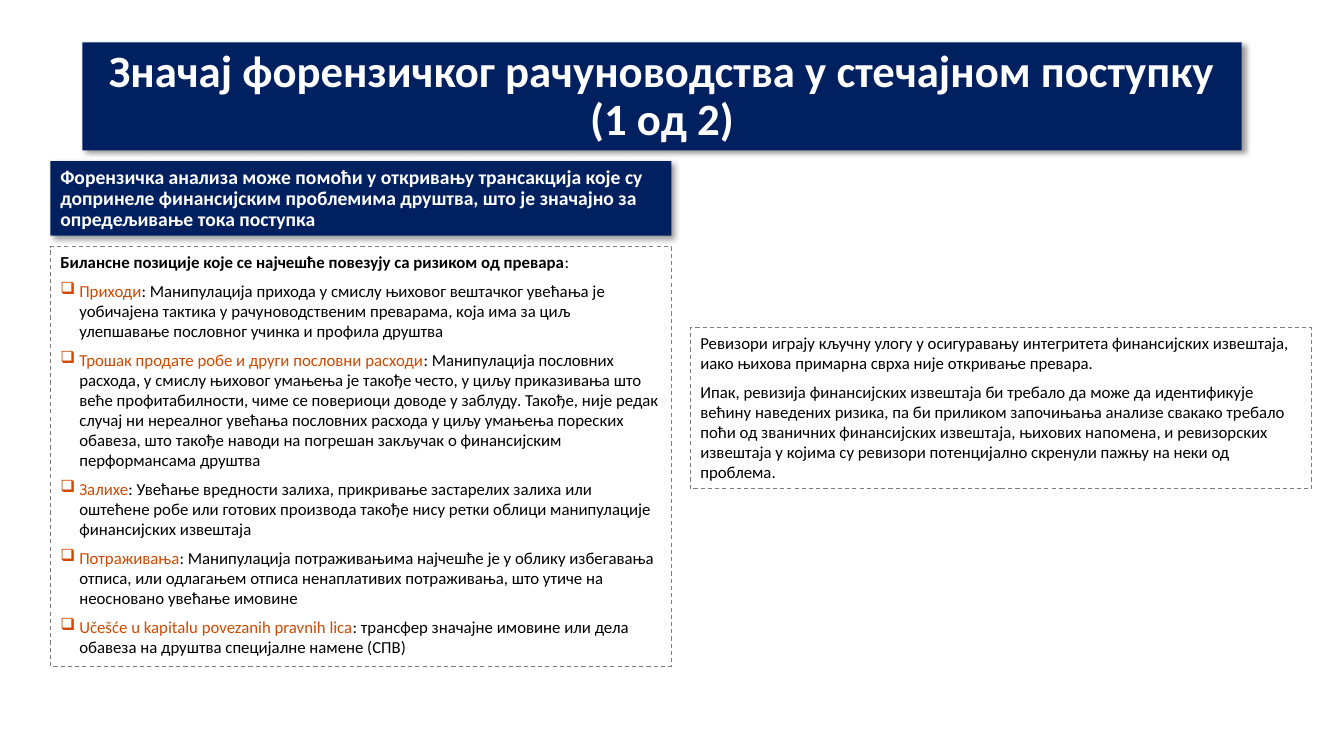
from lxml import etree
from pptx import Presentation
from pptx.dml.color import RGBColor
from pptx.enum import dml, shapes, text
from pptx.oxml import ns
from pptx.util import Cm, Pt

TITLE = "Значај форензичког рачуноводства у стечајном поступку (1 од 2)"
HEADLINE = (
    "Форензичка анализа може помоћи у откривању трансакција које су допринеле "
    "финансијским проблемима друштва, што је значајно за опредељивање тока поступка"
)
RISKS_INTRO = "Билансне позиције које се најчешће повезују са ризиком од превара"
RISKS = [
    ("Приходи",
     "Манипулација прихода у смислу њиховог вештачког увећања је уобичајена тактика у "
     "рачуноводственим преварама, која има за циљ улепшавање пословног учинка и профила друштва"),
    ("Трошак продате робе и други пословни расходи",
     "Манипулација пословних расхода, у смислу њиховог умањења је такође често, у циљу "
     "приказивања што веће профитабилности, чиме се повериоци доводе у заблуду. Такође, није "
     "редак случај ни нереалног увећања пословних расхода у циљу умањења пореских обавеза, "
     "што такође наводи на погрешан закључак о финансијским перформансама друштва"),
    ("Залихе",
     "Увећање вредности залиха, прикривање застарелих залиха или оштећене робе или готових "
     "производа такође нису ретки облици манипулације финансијских извештаја"),
    ("Потраживања",
     "Манипулација потраживањима најчешће је у облику избегавања отписа, или одлагањем отписа "
     "ненаплативих потраживања, што утиче на неосновано увећање имовине"),
    ("Učešće u kapitalu povezanih pravnih lica",
     "трансфер значајне имовине или дела обавеза на друштва специјалне намене (СПВ)"),
]
AUDIT = [
    "Ревизори играју кључну улогу у осигуравању интегритета финансијских извештаја, иако "
    "њихова примарна сврха није откривање превара.",
    "Ипак, ревизија финансијских извештаја би требало да може да идентификује већину наведених "
    "ризика, па би приликом започињања анализе свакако требало поћи од званичних финансијских "
    "извештаја, њихових напомена, и ревизорских извештаја у којима су ревизори потенцијално "
    "скренули пажњу на неки од проблема.",
]

NAVY = RGBColor(0x00, 0x20, 0x60)
WHITE = RGBColor(0xFF, 0xFF, 0xFF)
BLACK = RGBColor(0x00, 0x00, 0x00)
GRAY = RGBColor(0x7D, 0x7D, 0x7D)
ORANGE = RGBColor(0xD0, 0x4A, 0x02)
FONT = "Calibri"

LEFT, COLUMN, GUTTER = 1.27, 15.65, 0.48
RIGHT = LEFT + COLUMN + GUTTER
INDENT = Cm(0.48)


def add_panel(slide, left, top, width, height, anchor):
    panel = slide.shapes.add_shape(
        shapes.MSO_SHAPE.RECTANGLE, Cm(left), Cm(top), Cm(width), Cm(height))
    panel.shadow.inherit = False
    frame = panel.text_frame
    frame.word_wrap = True
    frame.auto_size = text.MSO_AUTO_SIZE.SHAPE_TO_FIT_TEXT
    frame.vertical_anchor = anchor
    return panel


def add_shadow(panel):
    effects = panel._element.spPr.find(ns.qn("a:effectLst"))
    shadow = etree.SubElement(
        effects, ns.qn("a:outerShdw"), blurRad=str(Pt(4)), dist=str(Pt(3)),
        dir="2700000", algn="tl", rotWithShape="0")
    color = etree.SubElement(shadow, ns.qn("a:srgbClr"), val=str(BLACK))
    etree.SubElement(color, ns.qn("a:alpha"), val="40000")


def add_bullet(paragraph):
    properties = paragraph._p.get_or_add_pPr()
    properties.set("marL", str(INDENT))
    properties.set("indent", str(-INDENT))
    color = etree.SubElement(properties, ns.qn("a:buClr"))
    etree.SubElement(color, ns.qn("a:srgbClr"), val=str(ORANGE))
    etree.SubElement(properties, ns.qn("a:buChar"), char="❑")


def add_run(paragraph, words, size, color, bold=False):
    run = paragraph.add_run()
    run.text = words
    run.font.name = FONT
    run.font.size = Pt(size)
    run.font.color.rgb = color
    run.font.bold = bold


def add_banner(slide, words, box, size, align):
    banner = add_panel(slide, *box, text.MSO_ANCHOR.BOTTOM)
    banner.fill.solid()
    banner.fill.fore_color.rgb = NAVY
    banner.line.fill.background()
    add_shadow(banner)
    paragraph = banner.text_frame.paragraphs[0]
    paragraph.alignment = align
    paragraph.line_spacing = 0.9
    add_run(paragraph, words, size, WHITE, bold=True)


def add_note(slide, box, entries):
    """Dashed box; each entry is (bulleted, runs) with runs of (words, color, bold)."""
    note = add_panel(slide, *box, text.MSO_ANCHOR.TOP)
    note.fill.background()
    note.line.color.rgb = GRAY
    note.line.width = Pt(0.75)
    note.line.dash_style = dml.MSO_LINE.DASH
    frame = note.text_frame
    for number, (bulleted, runs) in enumerate(entries):
        paragraph = frame.add_paragraph() if number else frame.paragraphs[0]
        if bulleted:
            add_bullet(paragraph)
        paragraph.alignment = text.PP_ALIGN.LEFT
        if number:
            paragraph.space_before = Pt(6)
        for words, color, bold in runs:
            add_run(paragraph, words, 12, color, bold)


def main():
    deck = Presentation()
    deck.slide_width, deck.slide_height = Cm(33.87), Cm(19.05)
    slide = deck.slides.add_slide(deck.slide_layouts[6])

    add_banner(slide, TITLE, (2.08, 1.07, 29.21, 2.72), 32, text.PP_ALIGN.CENTER)
    add_banner(slide, HEADLINE, (LEFT, 4.06, COLUMN, 1.88), 14, text.PP_ALIGN.LEFT)

    risks = [(False, [(RISKS_INTRO, BLACK, True), (":", BLACK, False)])]
    risks += [(True, [(position, ORANGE, False), (": " + risk, BLACK, False)])
              for position, risk in RISKS]
    add_note(slide, (LEFT, 6.22, COLUMN, 10.57), risks)
    add_note(slide, (RIGHT, 8.26, COLUMN, 4.06),
             [(False, [(words, BLACK, False)]) for words in AUDIT])

    deck.save("out.pptx")


if __name__ == "__main__":
    main()
